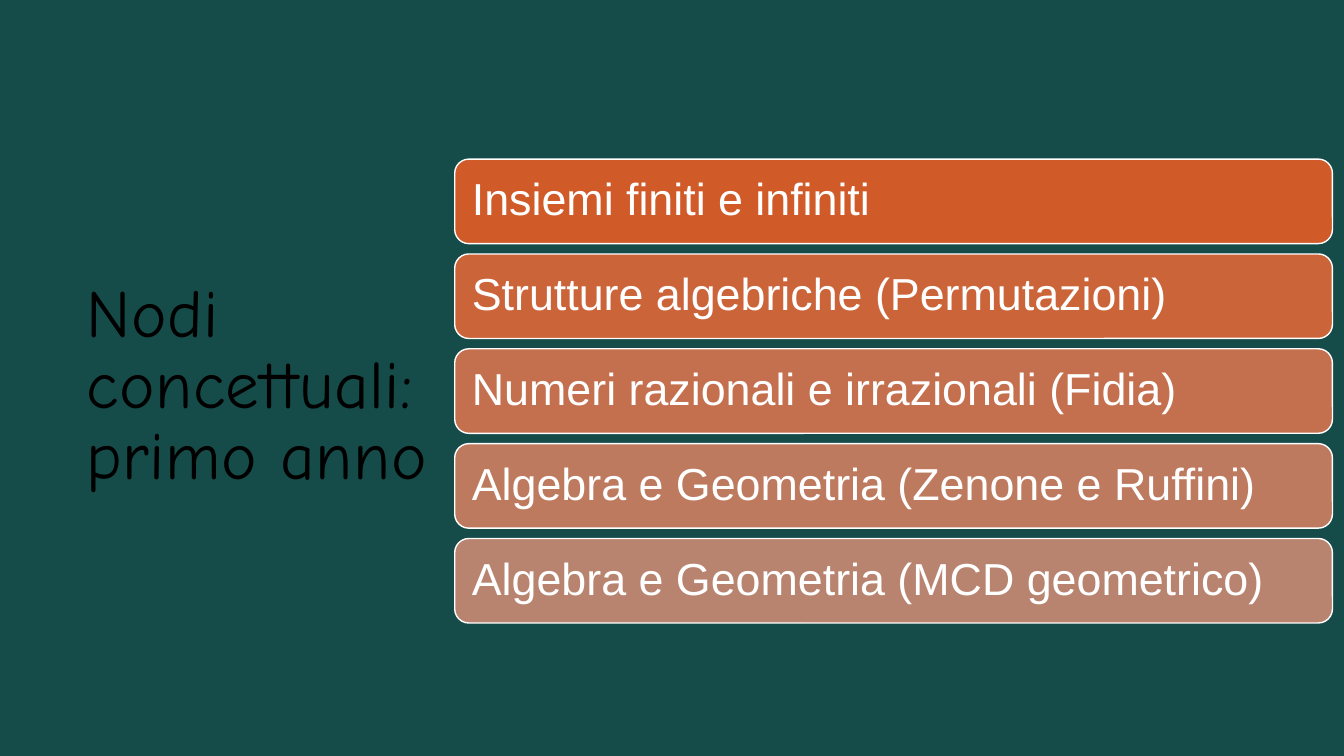
from dataclasses import dataclass

from pptx import Presentation
from pptx.dml.color import RGBColor
from pptx.enum.shapes import MSO_SHAPE
from pptx.enum.text import MSO_ANCHOR, MSO_AUTO_SIZE, PP_ALIGN
from pptx.util import Cm, Pt

ROUNDED = MSO_SHAPE.ROUNDED_RECTANGLE
MIDDLE = MSO_ANCHOR.MIDDLE
LEFT = PP_ALIGN.LEFT
NO_AUTOFIT = MSO_AUTO_SIZE.NONE
TITLE_ONLY = 5


@dataclass(frozen=True)
class Theme:
    background: str = "154C4A"
    title_color: str = "000000"
    topic_color: str = "FFFFFF"
    outline: str = "FFFFFF"
    title_font: str = "Comic Neue"
    topic_font: str = "Arial"
    title_size: int = 48
    topic_size: int = 32
    topic_fills: tuple = ("D15A29", "CC643A", "C46F4D", "BE7A5F", "B88470")


THEME = Theme()
TITLE = "Nodi concettuali: primo anno"
TOPICS = (
    "Insiemi finiti e infiniti",
    "Strutture algebriche (Permutazioni)",
    "Numeri razionali e irrazionali (Fidia)",
    "Algebra e Geometria (Zenone e Ruffini)",
    "Algebra e Geometria (MCD geometrico)",
)
TOPIC_TOP = 4.01
TOPIC_PITCH = 2.39


def paint(fill, color):
    fill.solid()
    fill.fore_color.rgb = RGBColor.from_string(color)


def write_text(sp, text, font, size, color, spacing, inset):
    tf = sp.text_frame
    tf.text = text
    tf.word_wrap = True
    tf.auto_size = NO_AUTOFIT
    tf.vertical_anchor = MIDDLE
    tf.margin_left = tf.margin_right = Cm(inset)
    tf.margin_top = tf.margin_bottom = Cm(inset)
    p = tf.paragraphs[0]
    p.alignment = LEFT
    p.line_spacing = spacing
    r = p.runs[0]
    r.font.name = font
    r.font.size = Pt(size)
    r.font.color.rgb = RGBColor.from_string(color)
    return r


def add_title(s, text):
    sp = s.shapes.title
    sp.left, sp.top, sp.width, sp.height = Cm(2.18), Cm(2.34), Cm(9.75), Cm(14.83)
    r = write_text(sp, text, THEME.title_font, THEME.title_size,
                   THEME.title_color, 0.88, 0)
    r.font._element.set("spc", "40")


def add_topic(s, text, top, fill):
    sp = s.shapes.add_shape(ROUNDED, Cm(11.46), Cm(top), Cm(22.12), Cm(2.13))
    sp.shadow.inherit = False
    paint(sp.fill, fill)
    paint(sp.line.fill, THEME.outline)
    sp.line.width = Pt(1)
    write_text(sp, text, THEME.topic_font, THEME.topic_size,
               THEME.topic_color, 0.9, 0.33)


def main():
    prs = Presentation()
    prs.slide_width = Cm(33.87)
    prs.slide_height = Cm(19.05)
    s = prs.slides.add_slide(prs.slide_layouts[TITLE_ONLY])
    paint(s.background.fill, THEME.background)
    add_title(s, TITLE)
    for i, (topic, fill) in enumerate(zip(TOPICS, THEME.topic_fills)):
        add_topic(s, topic, TOPIC_TOP + i * TOPIC_PITCH, fill)
    prs.save("out.pptx")


if __name__ == "__main__":
    main()
